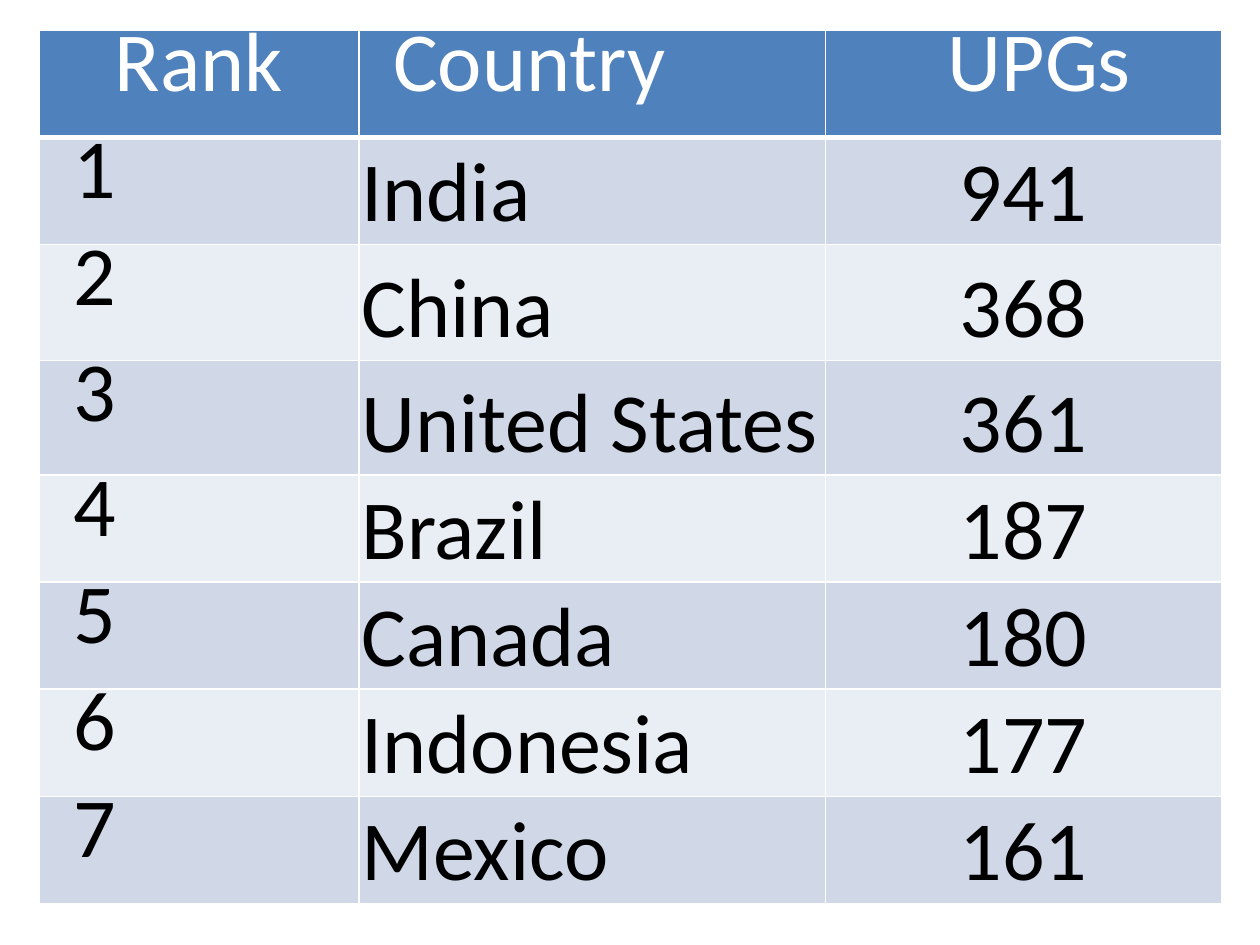
from lxml import etree
from pptx import Presentation
from pptx.dml.color import RGBColor
from pptx.enum.text import MSO_ANCHOR, PP_ALIGN
from pptx.oxml.ns import qn
from pptx.util import Inches, Pt

LEFT, CENTER, JUSTIFY = PP_ALIGN.LEFT, PP_ALIGN.CENTER, PP_ALIGN.JUSTIFY
TOP, BOTTOM = MSO_ANCHOR.TOP, MSO_ANCHOR.BOTTOM

HEADER = ("Rank", "Country", "UPGs")
COUNTRIES = [
    ("India", 941),
    ("China", 368),
    ("United States", 361),
    ("Brazil", 187),
    ("Canada", 180),
    ("Indonesia", 177),
    ("Mexico", 161),
]
ROWS = [HEADER] + [(i, *c) for i, c in enumerate(COUNTRIES, 1)]

COLORS = {"header": "4F81BD", "odd": "D0D8E8", "even": "E9EDF4",
          "border": "FFFFFF", "head_text": "FFFFFF", "text": "000000"}
COL_WIDTHS = (2.54, 3.7, 3.15)
ROW_HEIGHTS = (0.85, 0.85, 0.92, 0.91, 0.85, 0.85, 0.85, 0.85)
LINE = Pt(24)
INDENT = Inches(0.25)

HEAD_FORMATS = [(CENTER, TOP, 0), (JUSTIFY, TOP, INDENT), (CENTER, TOP, INDENT)]
BODY_FORMATS = [(JUSTIFY, TOP, INDENT), (LEFT, BOTTOM, 0), (CENTER, BOTTOM, 0)]


def add_borders(cell, widths):
    tcPr = cell._tc.get_or_add_tcPr()
    for side, width in widths.items():
        ln = etree.SubElement(tcPr, qn(f"a:ln{side}"), w=str(Pt(width)))
        fill = etree.SubElement(ln, qn("a:solidFill"))
        etree.SubElement(fill, qn("a:srgbClr"), val=COLORS["border"])


def fill_cell(cell, text, fill, color, align, anchor, indent, bottom_width):
    add_borders(cell, {"L": 1, "R": 1, "T": 1, "B": bottom_width})
    cell.fill.solid()
    cell.fill.fore_color.rgb = RGBColor.from_string(COLORS[fill])
    layout = {"margin_left": Inches(0.02), "margin_right": Inches(0.02),
              "margin_top": LINE if anchor == TOP else 0,
              "margin_bottom": 0, "vertical_anchor": anchor}
    for name, value in layout.items():
        setattr(cell, name, value)
    p = cell.text_frame.paragraphs[0]
    p.alignment = align
    p.line_spacing = LINE
    if indent:
        p._p.get_or_add_pPr().set("indent", str(indent))
    r = p.add_run()
    r.text = str(text)
    for name, value in {"name": "Calibri", "size": Pt(48), "bold": False}.items():
        setattr(r.font, name, value)
    r.font.color.rgb = RGBColor.from_string(COLORS[color])


prs = Presentation()
prs.slide_width, prs.slide_height = Inches(10), Inches(7.5)
s = prs.slides.add_slide(prs.slide_layouts[6])

table = s.shapes.add_table(
    len(ROWS), len(HEADER), Inches(0.31), Inches(0.24),
    Inches(sum(COL_WIDTHS)), Inches(sum(ROW_HEIGHTS))).table
table.first_row = table.horz_banding = False
for col, width in zip(table.columns, COL_WIDTHS):
    col.width = Inches(width)
for row, height in zip(table.rows, ROW_HEIGHTS):
    row.height = Inches(height)

for i, values in enumerate(ROWS):
    if i == 0:
        fill, color, formats, bottom = "header", "head_text", HEAD_FORMATS, 3
    else:
        fill, color, formats, bottom = ("odd" if i % 2 else "even"), "text", BODY_FORMATS, 1
    for j, (text, fmt) in enumerate(zip(values, formats)):
        fill_cell(table.cell(i, j), text, fill, color, *fmt, bottom)

prs.save("out.pptx")
